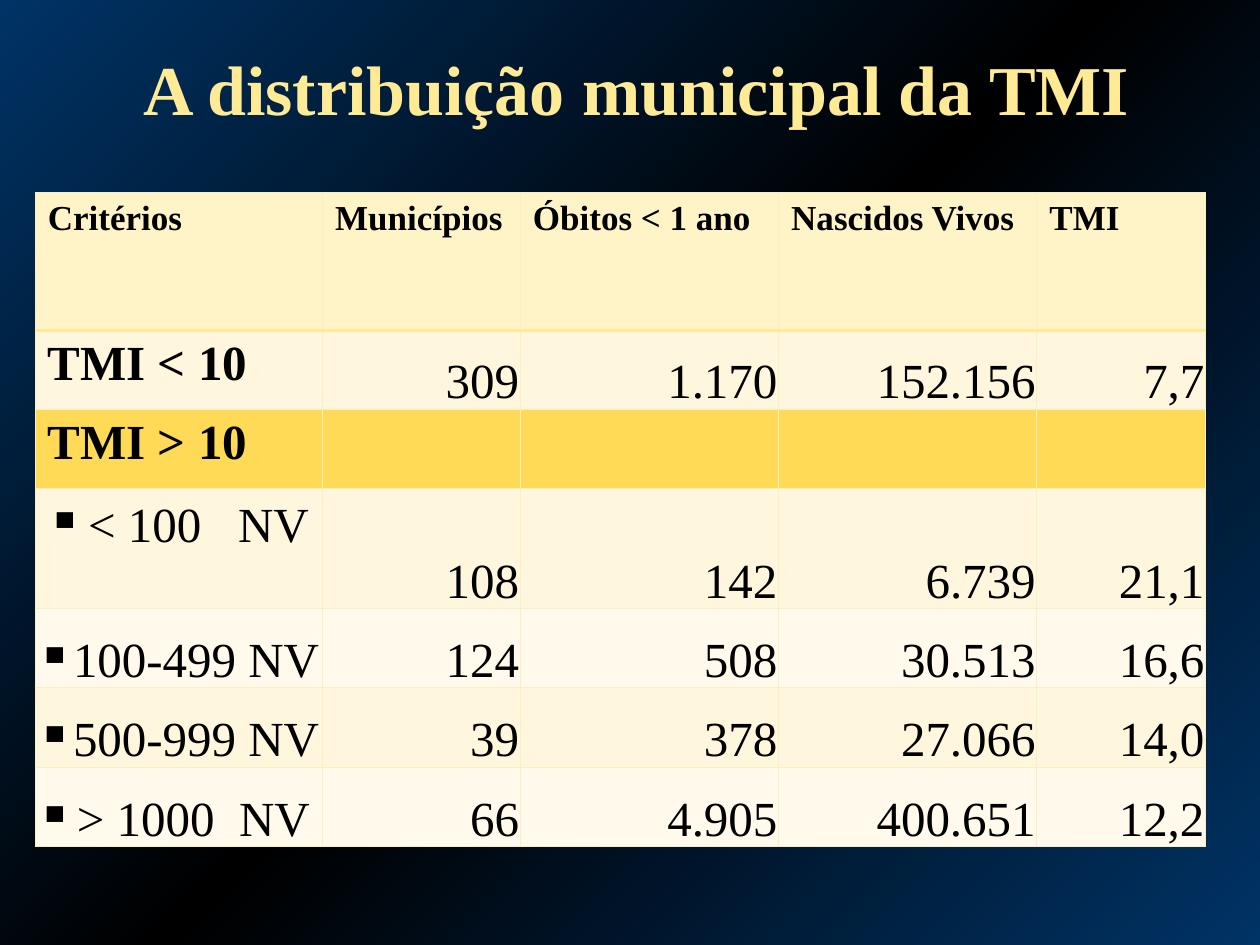
import copy
from dataclasses import dataclass

import pptx
import pptx.dml.color
import pptx.enum.text
import pptx.oxml
import pptx.oxml.ns
import pptx.util

Inches = pptx.util.Inches
Pt = pptx.util.Pt
qn = pptx.oxml.ns.qn
ALIGN = pptx.enum.text.PP_ALIGN
ANCHOR = pptx.enum.text.MSO_ANCHOR
NS = 'xmlns:a="http://schemas.openxmlformats.org/drawingml/2006/main"'


@dataclass(frozen=True)
class Theme:
    font: str = "Times New Roman"
    navy: str = "003366"
    black: str = "000000"
    gold: str = "FFEB95"
    head: str = "FFF3C8"
    group: str = "FFDA56"
    band: str = "FFF6DE"
    pale: str = "FFFAEC"
    line: str = "FBEEC2"
    title: int = 40
    label: int = 20
    body: int = 28


@dataclass(frozen=True)
class Bullet:
    """Gap from bullet to text in inches; extra space before NV in points."""
    indent: float
    space: int = 0


@dataclass(frozen=True)
class Row:
    cells: tuple
    fill: str
    high: float = 0.63
    bullet: Bullet | None = None
    top: bool = False


THEME = Theme()
WIDTHS = (2.28, 1.57, 2.05, 2.05, 1.34)
ROWS = (
    Row(("Critérios", "Municípios", "Óbitos < 1 ano", "Nascidos Vivos", "TMI"),
        THEME.head, high=1.09),
    Row(("TMI < 10", "309", "1.170", "152.156", "7,7"), THEME.band),
    Row(("TMI > 10", "", "", "", ""), THEME.group),
    Row(("< 100 NV", "108", "142", "6.739", "21,1"), THEME.band,
        high=0.95, bullet=Bullet(0.33, 14), top=True),
    Row(("100-499 NV", "124", "508", "30.513", "16,6"), THEME.pale,
        bullet=Bullet(0.22)),
    Row(("500-999 NV", "39", "378", "27.066", "14,0"), THEME.band,
        bullet=Bullet(0.22)),
    Row(("> 1000 NV", "66", "4.905", "400.651", "12,2"), THEME.pale,
        bullet=Bullet(0.32, 7)),
)


def tint(text: str):
    return pptx.dml.color.RGBColor.from_string(text)


def apply(thing, values: dict) -> None:
    for name, value in values.items():
        setattr(thing, name, value)


def write(para, text: str, size: int, bold: bool = False,
          color: str = THEME.black):
    run = para.add_run()
    run.text = text
    apply(run.font, {"name": THEME.font, "size": Pt(size), "bold": bold})
    run.font.color.rgb = tint(color)
    return run


def paint_back(slide) -> None:
    fill = slide.background.fill
    fill.gradient()
    fill.gradient_angle = 315
    stops = slide.element.find(".//" + qn("a:gsLst"))
    stops.append(copy.deepcopy(stops[-1]))
    colors = (THEME.navy, THEME.black, THEME.navy)
    for stop, color, place in zip(fill.gradient_stops, colors, (0, 0.5, 1)):
        stop.color.rgb = tint(color)
        stop.position = place


def add_title(slide, text: str) -> None:
    box = slide.shapes.add_textbox(
        Inches(0.59), Inches(0.29), Inches(8.92), Inches(0.81))
    frame = box.text_frame
    apply(frame, {"word_wrap": True, "vertical_anchor": ANCHOR.MIDDLE})
    para = frame.paragraphs[0]
    para.alignment = ALIGN.CENTER
    write(para, text, THEME.title, True, THEME.gold)


def edge_cell(cell, heads: dict) -> None:
    """Draw the four borders; heads names those in the heavy header line."""
    props = cell._tc.get_or_add_tcPr()
    for spot, side in enumerate("LRTB"):
        color, width = heads.get(side, (THEME.line, 0.75))
        props.insert(spot, pptx.oxml.parse_xml(
            f'<a:ln{side} {NS} w="{Pt(width)}"><a:solidFill>'
            f'<a:srgbClr val="{color}"/></a:solidFill></a:ln{side}>'))


def write_item(para, text: str, bullet: Bullet) -> None:
    props = para._p.get_or_add_pPr()
    left = Inches(bullet.indent)
    props.set("marL", str(left))
    props.set("indent", str(-left))
    props.append(pptx.oxml.parse_xml(f'<a:buChar {NS} char="▪"/>'))
    start, unit = text.rsplit(" ", 1)
    write(para, start, THEME.body)
    gap = write(para, " ", THEME.body)
    gap.font._element.set("spc", str(bullet.space * 100))
    write(para, unit, THEME.body)


def fill_cell(cell, text: str, row: Row, first: bool, head: bool) -> None:
    para = cell.text_frame.paragraphs[0]
    if head or (first and not row.bullet):
        write(para, text, THEME.label if head else THEME.body, True)
        return
    if not text:
        return
    tight = Inches(0.01)
    apply(cell, {"margin_left": tight, "margin_right": tight,
                 "margin_top": tight, "margin_bottom": 0,
                 "vertical_anchor": ANCHOR.BOTTOM})
    if first:
        if row.top:
            apply(cell, {"margin_left": Inches(0.09),
                         "margin_top": Inches(0.08),
                         "vertical_anchor": ANCHOR.TOP})
        write_item(para, text, row.bullet)
    else:
        para.alignment = ALIGN.RIGHT
        write(para, text, THEME.body)


def add_grid(slide) -> None:
    high = sum(row.high for row in ROWS)
    grid = slide.shapes.add_table(
        len(ROWS), len(WIDTHS), Inches(0.28), Inches(1.53),
        Inches(sum(WIDTHS)), Inches(high)).table
    apply(grid, {"first_row": False, "horz_banding": False})
    for col, width in zip(grid.columns, WIDTHS):
        col.width = Inches(width)
    heavy = (THEME.gold, 2)
    heads = {0: {"B": heavy}, 1: {"T": heavy}}
    for r, row in enumerate(ROWS):
        grid.rows[r].height = Inches(row.high)
        for c, text in enumerate(row.cells):
            cell = grid.cell(r, c)
            cell.fill.solid()
            cell.fill.fore_color.rgb = tint(row.fill)
            edge_cell(cell, heads.get(r, {}))
            fill_cell(cell, text, row, c == 0, r == 0)


def main() -> None:
    deck = pptx.Presentation()
    apply(deck, {"slide_width": Inches(10), "slide_height": Inches(7.5)})
    slide = deck.slides.add_slide(deck.slide_layouts[6])
    paint_back(slide)
    add_grid(slide)
    add_title(slide, "A distribuição municipal da TMI")
    deck.save("out.pptx")


if __name__ == "__main__":
    main()
